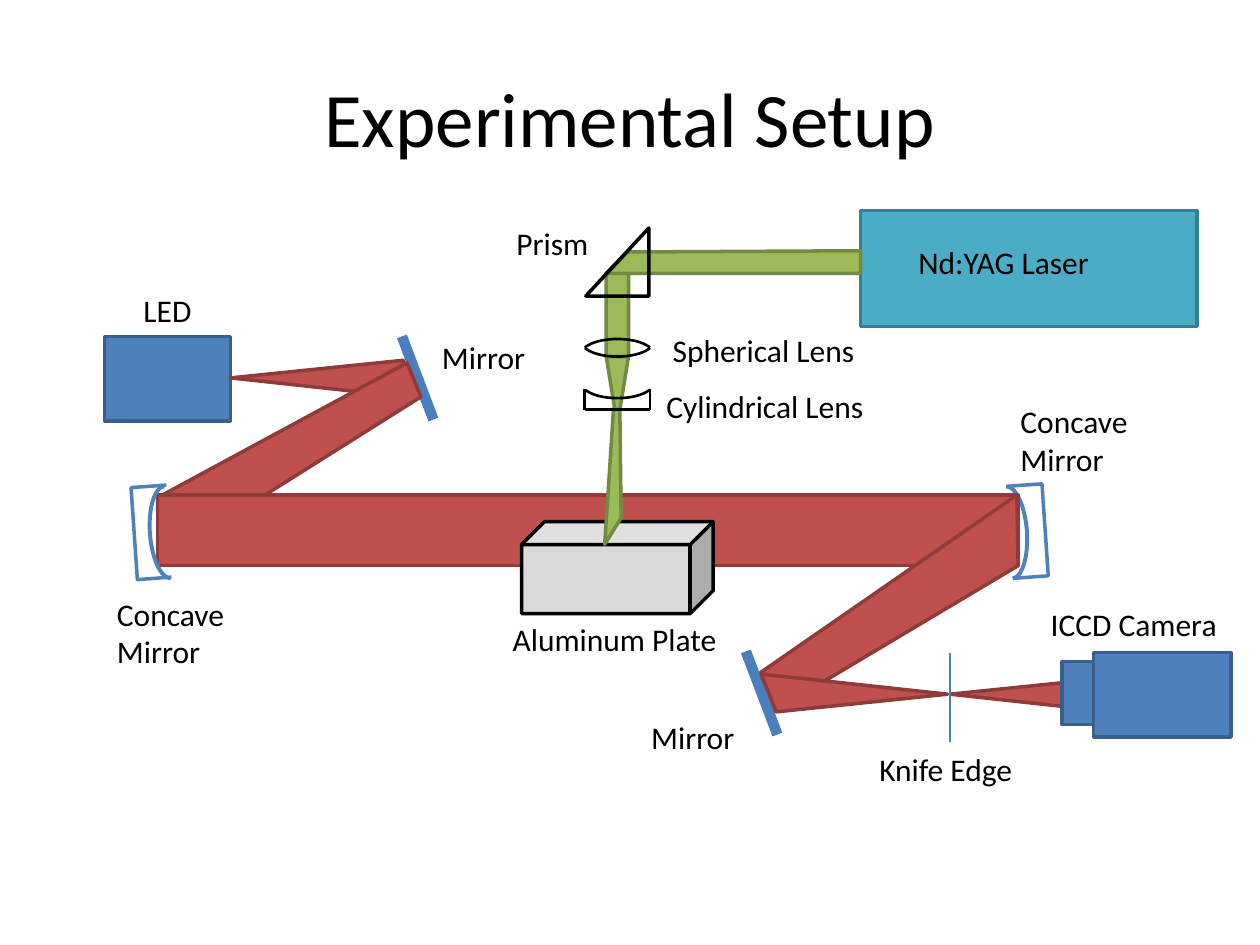
from lxml import etree
from pptx import Presentation
from pptx.dml.color import RGBColor
from pptx.enum.shapes import MSO_CONNECTOR, MSO_SHAPE
from pptx.enum.text import MSO_ANCHOR, MSO_AUTO_SIZE, PP_ALIGN
from pptx.oxml.ns import qn
from pptx.util import Inches, Pt

RECTANGLE, ARC, CUBE = MSO_SHAPE.RECTANGLE, MSO_SHAPE.ARC, MSO_SHAPE.CUBE
TRIANGLE = MSO_SHAPE.RIGHT_TRIANGLE
STRAIGHT = MSO_CONNECTOR.STRAIGHT
CENTER, MIDDLE = PP_ALIGN.CENTER, MSO_ANCHOR.MIDDLE
GROW = MSO_AUTO_SIZE.SHAPE_TO_FIT_TEXT
LINE, PATH = "line", "path"

# name: fill, line colour, line width in points
STYLES = {
    "device": ("4F81BD", "3A5F8C", 2),
    "laser": ("4BACC6", "377F92", 2),
    "plate": ("D9D9D9", "000000", 2),
    "red beam": ("C0504D", "8E3B39", 2),
    "green beam": ("9BBB59", "738A42", 2),
    "mirror": (None, "4B7EBC", 6),
    "knife": (None, "4B7EBC", 1.5),
    "mirror back": (None, "4F81BD", 2),
    "mirror face": (None, "4F81BD", 2.25),
    "lens": (None, "000000", 1.5),
    "prism": (None, "000000", 2),
}
# Start and end angle of an arc, in units of 0.6 per degree
CONCAVE = (54.04, 161.87)
LENS = (115.37, 208.54)

# kind, style, geometry, then rotation and angles for arcs.
# Geometry: left, top, width, height; for a line both ends; for a path its points.
PARTS = [
    # LED, schlieren beam and camera
    (RECTANGLE, "device", (0.83, 2.67, 1, 0.67)),
    (LINE, "mirror", (3.19, 2.67, 3.44, 3.33)),
    (PATH, "mirror back", [(8.04, 4.59), (8.32, 4.57), (8.27, 3.84), (7.99, 3.86)]),
    (ARC, "mirror face", (7.87, 3.86, 0.28, 0.73), 176, CONCAVE),
    (PATH, "red beam", [(3.31, 3.16), (1.83, 3), (3.2, 2.86)]),
    (PATH, "red beam", [(1.25, 3.95), (3.23, 2.88), (3.34, 3.15), (1.26, 4.46)]),
    (RECTANGLE, "red beam", (1.25, 3.93, 6.83, 0.56)),
    (ARC, "mirror face", (1.19, 3.86, 0.28, 0.73), 355.9, CONCAVE),
    (PATH, "mirror back", [(1.32, 3.85), (1.04, 3.87), (1.09, 4.6), (1.36, 4.58)]),
    (PATH, "red beam", [(8.08, 4.49), (6.1, 5.67), (5.99, 5.37), (8.07, 3.93)]),
    (LINE, "mirror", (5.92, 5.17, 6.17, 5.83)),
    (PATH, "red beam", [(6.04, 5.35), (7.52, 5.51), (6.16, 5.65)]),
    (PATH, "red beam", [(9.02, 5.67), (7.54, 5.51), (8.91, 5.37)]),
    (RECTANGLE, "device", (8.43, 5.25, 0.25, 0.5)),
    (RECTANGLE, "device", (8.68, 5.18, 1.09, 0.67)),
    (LINE, "knife", (7.54, 5.18, 7.54, 5.89)),
    # Laser, focusing optics and plate
    (RECTANGLE, "laser", (6.83, 1.67, 2.67, 0.92)),
    (CUBE, "plate", (4.14, 4.14, 1.52, 0.73)),
    (PATH, "green beam", [(4.8, 4.32), (4.87, 3.24), (4.92, 3.24), (4.93, 4.11)]),
    (PATH, "green beam", [(4.99, 2.82), (4.92, 3.25), (4.88, 3.25), (4.81, 2.82)]),
    (ARC, "lens", (4.61, 2.91, 0.58, 0.25), 180, LENS),
    (LINE, "lens", (4.64, 3.09, 4.64, 3.25)),
    (LINE, "lens", (4.64, 3.25, 5.16, 3.25)),
    (LINE, "lens", (5.16, 3.09, 5.16, 3.25)),
    (PATH, "green beam", [(4.81, 2.17), (4.99, 1.99), (4.99, 2.83), (4.81, 2.83)]),
    (ARC, "lens", (4.61, 2.69, 0.58, 0.25), 0, LENS),
    (ARC, "lens", (4.61, 2.58, 0.58, 0.25), 180, LENS),
    (PATH, "green beam", [(4.98, 2), (4.82, 2.17), (6.83, 2.17), (6.83, 1.99)]),
    (TRIANGLE, "prism", (4.65, 1.81, 0.5, 0.54)),
]

LABELS = [
    ("Nd:YAG Laser", 7.19, 1.88, 2.19, 0.4),
    ("LED", 1.04, 2.26, 2.19, 0.4),
    ("Aluminum Plate", 3.97, 4.87, 1.86, 0.4),
    ("ICCD Camera", 8.24, 4.75, 1.69, 0.4),
    ("Knife Edge", 6.88, 5.9, 1.29, 0.4),
    ("Cylindrical Lens", 5.19, 3.02, 1.84, 0.4),
    ("Spherical Lens", 5.24, 2.58, 1.84, 0.4),
    ("Prism", 4, 1.73, 0.84, 0.4),
    ("Concave Mirror", 8, 3.14, 1.12, 0.71),
    ("Mirror", 3.41, 2.63, 0.94, 0.4),
    ("Mirror", 5.07, 5.65, 0.94, 0.4),
    ("Concave Mirror", 0.83, 4.67, 1.12, 0.71),
]


def color(hex_string):
    return RGBColor.from_string(hex_string)


def format_text(paragraph, size):
    for run in paragraph.runs:
        run.font.name = "Calibri"
        run.font.size = Pt(size)
        run.font.color.rgb = color("000000")


presentation = Presentation()
presentation.slide_width = Inches(10)
presentation.slide_height = Inches(7.5)
slide = presentation.slides.add_slide(presentation.slide_layouts[5])

title = slide.shapes.title
title.left, title.top = Inches(0.5), Inches(0.3)
title.width, title.height = Inches(9), Inches(1.25)
title.text_frame.text = "Experimental Setup"
title.text_frame.vertical_anchor = MIDDLE
title.text_frame.paragraphs[0].alignment = CENTER
format_text(title.text_frame.paragraphs[0], 44)

for kind, style, geometry, *arc_settings in PARTS:
    fill, line_color, line_width = STYLES[style]
    if kind == PATH:
        points = [(Inches(x), Inches(y)) for x, y in geometry]
        builder = slide.shapes.build_freeform(*points[0])
        builder.add_line_segments(points[1:], close=fill is not None)
        shape = builder.convert_to_shape()
    elif kind == LINE:
        shape = slide.shapes.add_connector(STRAIGHT, *map(Inches, geometry))
        etree.SubElement(shape._element.spPr, qn("a:effectLst"))
    else:
        shape = slide.shapes.add_shape(kind, *map(Inches, geometry))

    if arc_settings:
        shape.rotation, angles = arc_settings
        shape.adjustments[0], shape.adjustments[1] = angles
    if kind == TRIANGLE:
        shape._element.spPr.find(qn("a:xfrm")).set("flipH", "1")
    if kind != LINE:
        shape.shadow.inherit = False
        if fill:
            shape.fill.solid()
            shape.fill.fore_color.rgb = color(fill)
        else:
            shape.fill.background()
    shape.line.color.rgb = color(line_color)
    shape.line.width = Pt(line_width)

for text, *box in LABELS:
    label = slide.shapes.add_textbox(*map(Inches, box))
    label.text_frame.word_wrap = True
    label.text_frame.auto_size = GROW
    label.text_frame.text = text
    format_text(label.text_frame.paragraphs[0], 18)

presentation.save("out.pptx")
